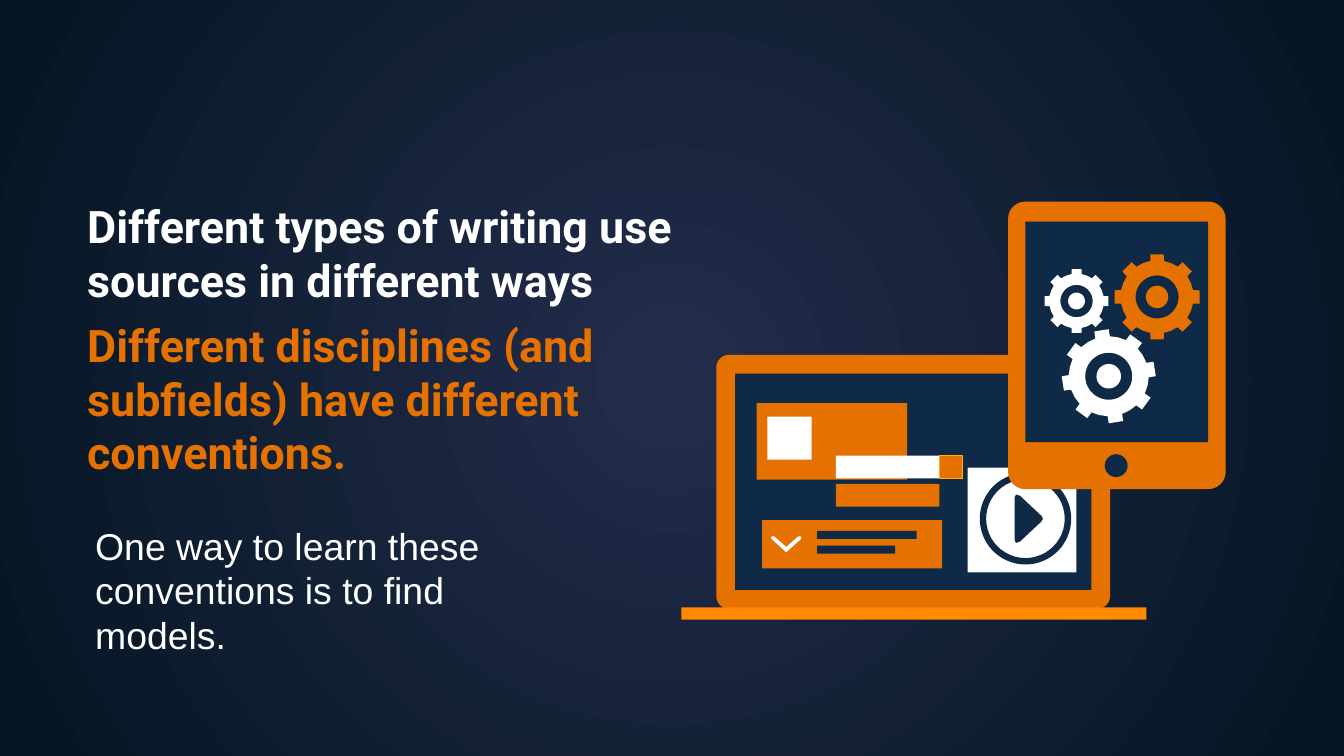
from dataclasses import dataclass
from math import cos, pi, sin

from pptx import Presentation
from pptx.dml.color import RGBColor
from pptx.enum.shapes import MSO_SHAPE
from pptx.oxml import parse_xml
from pptx.oxml.ns import nsdecls, qn
from pptx.util import Inches, Pt


@dataclass(frozen=True)
class Theme:
    """Colours, fonts and type sizes of the slide."""

    glow: str = "232D4B"
    edge: str = "041523"
    orange: str = "E57200"
    amber: str = "FF8900"
    gold: str = "FFB215"
    navy: str = "0E2A47"
    white: str = "FFFFFF"
    heading_font: str = "Roboto"
    body_font: str = "Arial"
    heading_size: int = 24
    body_size: int = 20


THEME = Theme()
CELL = Inches(0.1)
COLUMNS, ROWS = 100, 56.25
TEETH = 8


def cells(*values):
    """Turn grid cells into slide lengths."""
    return [round(value * CELL) for value in values]


def paint(shape, colour, line=None):
    """Give a shape a flat fill, an optional thin outline and no shadow."""
    shape.shadow.inherit = False
    shape.fill.solid()
    shape.fill.fore_color.rgb = RGBColor.from_string(colour)
    if line:
        shape.line.color.rgb = RGBColor.from_string(line)
        shape.line.width = Pt(0.75)
    else:
        shape.line.fill.background()


def add_preset(slide, kind, box, colour, adjustment=None, line=None):
    """Add a preset shape in a box given in grid cells."""
    shape = slide.shapes.add_shape(kind, *cells(*box))
    if adjustment is not None:
        shape.adjustments[0] = adjustment
    paint(shape, colour, line)


def add_outline(slide, contours, colour):
    """Add one freeform made of closed contours in grid cells."""
    builder = None
    for contour in contours:
        start, *rest = [cells(*point) for point in contour]
        if builder is None:
            builder = slide.shapes.build_freeform(*start, scale=1)
        else:
            builder.move_to(*start)
        builder.add_line_segments(rest, close=True)
    paint(builder.convert_to_shape(), colour)


def circle(x, y, radius, direction=1, steps=48):
    """Return the points of a circle."""
    angles = [direction * 2 * pi * step / steps for step in range(steps)]
    return [(x + radius * cos(angle), y + radius * sin(angle)) for angle in angles]


def add_gear(slide, x, y, radius, colour, turn=0):
    """Add a toothed wheel with a ring-shaped hole around its hub."""
    tip, body, half = 0.155, 0.185, 0.85
    profile = [(-body, half), (-tip, 1), (tip, 1), (body, half), (pi / TEETH, half)]
    rim = []
    for tooth in range(TEETH):
        middle = turn * pi / 180 + 2 * pi * tooth / TEETH
        for offset, share in profile:
            angle = middle + offset
            rim.append((x + radius * share * cos(angle), y + radius * share * sin(angle)))
    contours = [rim, circle(x, y, radius * 0.5, -1), circle(x, y, radius * 0.26)]
    add_outline(slide, contours, colour)


def add_text(slide, box, paragraphs):
    """Add a wrapped text box of (text, font values, space after) paragraphs."""
    frame = slide.shapes.add_textbox(*cells(*box)).text_frame
    frame.word_wrap = True
    for side in ("left", "top", "right", "bottom"):
        setattr(frame, f"margin_{side}", CELL)
    for index, (text, values, space) in enumerate(paragraphs):
        paragraph = frame.paragraphs[0] if index == 0 else frame.add_paragraph()
        paragraph.space_after = Pt(space)
        run = paragraph.add_run()
        run.text = text
        colour = values["colour"]
        run.font.color.rgb = RGBColor.from_string(colour)
        for name in ("name", "size", "bold"):
            setattr(run.font, name, values[name])


def add_background(slide):
    """Fill the background with a glow that darkens from the centre."""
    fill = slide.background.fill
    fill.gradient()
    for stop, colour in zip(fill.gradient_stops, (THEME.glow, THEME.edge)):
        stop.color.rgb = RGBColor.from_string(colour)
    linear = slide.element.find(".//" + qn("a:lin"))
    radial = parse_xml(
        f'<a:path {nsdecls("a")} path="circle">'
        '<a:fillToRect l="50000" t="50000" r="50000" b="50000"/></a:path>'
    )
    linear.getparent().replace(linear, radial)


def add_laptop(slide):
    """Add the laptop with its cards and play button."""
    add_preset(slide, MSO_SHAPE.ROUNDED_RECTANGLE, (53.3, 26.4, 29.3, 18.9), THEME.orange, 0.05)
    panels = [
        ((54.7, 27.8, 26.5, 16.1), THEME.navy),
        ((50.7, 45.2, 34.6, 0.9), THEME.amber),
        ((56.3, 30, 11.2, 5.7), THEME.orange),
        ((57.1, 31, 3.3, 3.2), THEME.white),
        ((60.2, 38.7, 9.9, 3.6), THEME.orange),
        ((60.8, 39.5, 7.4, 0.6), THEME.navy),
        ((60.8, 40.6, 5.8, 0.6), THEME.navy),
        ((56.7, 38.7, 3.5, 3.6), THEME.orange),
        ((62.2, 36, 7.7, 1.7), THEME.orange),
        ((62.2, 33.9, 7.7, 1.7), THEME.white),
    ]
    for box, colour in panels:
        add_preset(slide, MSO_SHAPE.RECTANGLE, box, colour)
    add_preset(slide, MSO_SHAPE.RECTANGLE, (69.9, 33.9, 1.7, 1.7), THEME.orange, line=THEME.gold)
    add_preset(slide, MSO_SHAPE.RECTANGLE, (72, 34.8, 8.1, 7.8), THEME.white)
    chevron = [(57.4, 39.9), (57.6, 39.9), (58.5, 40.7), (59.4, 39.9), (59.6, 39.9),
               (59.6, 40.1), (58.6, 41), (58.5, 41.1), (58.4, 41), (57.4, 40.1)]
    add_outline(slide, [chevron], THEME.white)
    add_preset(slide, MSO_SHAPE.DONUT, (72.9, 35.2, 6.8, 6.8), THEME.navy, 0.07)
    play = [(75.5, 37), (75.6, 36.8), (75.9, 36.9), (77.5, 38.4), (77.6, 38.6),
            (77.5, 38.8), (75.9, 40.3), (75.6, 40.4), (75.5, 40.2)]
    add_outline(slide, [play], THEME.navy)


def add_tablet(slide):
    """Add the tablet with three gears on its screen."""
    add_preset(slide, MSO_SHAPE.ROUNDED_RECTANGLE, (75, 15, 16.2, 21.4), THEME.orange, 0.08)
    add_preset(slide, MSO_SHAPE.RECTANGLE, (76.3, 16.5, 13.6, 16.4), THEME.navy)
    add_preset(slide, MSO_SHAPE.OVAL, (82.2, 33.8, 1.7, 1.7), THEME.navy)
    add_gear(slide, 86.1, 22.1, 3.2, THEME.orange)
    add_gear(slide, 80.1, 22.4, 2.4, THEME.white)
    add_gear(slide, 82.5, 28, 3.5, THEME.white, -9)


def main():
    """Build the slide and save it."""
    presentation = Presentation()
    presentation.slide_width, presentation.slide_height = cells(COLUMNS, ROWS)
    slide = presentation.slides.add_slide(presentation.slide_layouts[6])
    add_background(slide)
    add_laptop(slide)
    add_tablet(slide)
    heading = {"name": THEME.heading_font, "size": Pt(THEME.heading_size), "bold": True}
    body = {"name": THEME.body_font, "size": Pt(THEME.body_size), "bold": False}
    add_text(slide, (5.5, 13.8, 45.9, 22.8), [
        ("Different types of writing use sources in different ways",
         {**heading, "colour": THEME.white}, 6),
        ("Different disciplines (and subfields) have different conventions.",
         {**heading, "colour": THEME.orange}, 0),
    ])
    add_text(slide, (6.1, 37.9, 37.8, 15.5), [
        ("One way to learn these conventions is to find models.",
         {**body, "colour": THEME.white}, 0),
    ])
    presentation.save("out.pptx")


if __name__ == "__main__":
    main()
